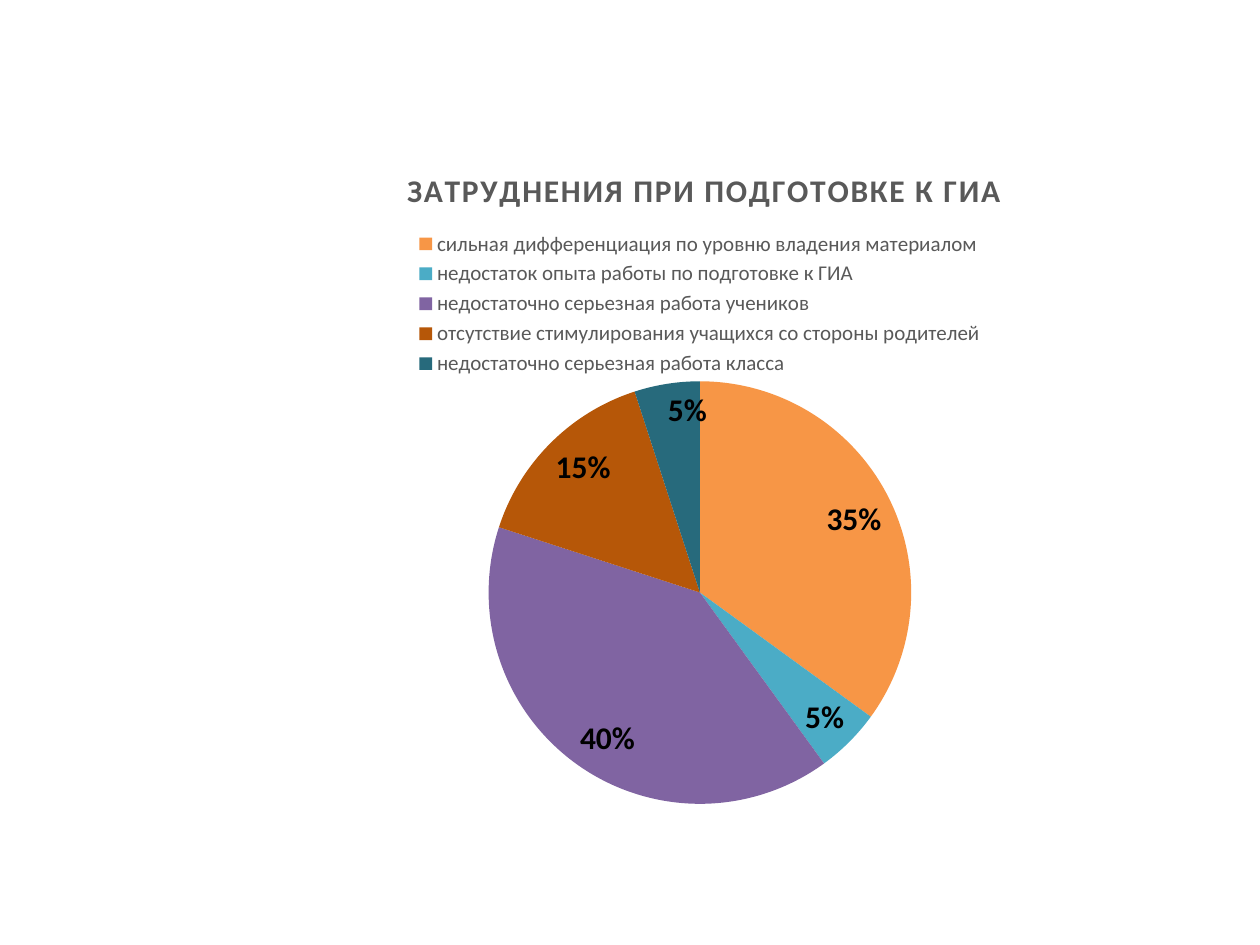
from lxml import etree
from pptx import Presentation
from pptx.chart.data import CategoryChartData
from pptx.dml.color import RGBColor
from pptx.enum.chart import XL_CHART_TYPE, XL_LABEL_POSITION, XL_LEGEND_POSITION
from pptx.oxml.ns import qn
from pptx.util import Pt

PIE = XL_CHART_TYPE.PIE
INSIDE_END = XL_LABEL_POSITION.INSIDE_END
LEGEND_TOP = XL_LEGEND_POSITION.TOP

TITLE = "ЗАТРУДНЕНИЯ ПРИ ПОДГОТОВКЕ К ГИА"
DIFFICULTIES = [
    ("сильная дифференциация по уровню владения материалом", 35, "F79646"),
    ("недостаток опыта работы по подготовке к ГИА", 5, "4BACC6"),
    ("недостаточно серьезная работа учеников", 40, "8064A2"),
    ("отсутствие стимулирования учащихся со стороны родителей", 15, "B65708"),
    ("недостаточно серьезная работа класса", 5, "276A7C"),
]


def color(value):
    return RGBColor.from_string(value)


class SlideBuilder:
    font_name = "Calibri"
    text_color = "595959"
    label_color = "000000"

    def __init__(self, slide):
        self.slide = slide

    def format_font(self, font, size, font_color, bold=False):
        values = {"name": self.font_name, "size": Pt(size), "bold": bold}
        for name, value in values.items():
            setattr(font, name, value)
        font.color.rgb = color(font_color)

    def place(self, element, successors, **fractions):
        for old_layout in element.findall(qn("c:layout")):
            element.remove(old_layout)
        layout = etree.Element(qn("c:layout"))
        manual = etree.SubElement(layout, qn("c:manualLayout"))
        settings = {"xMode": "edge", "yMode": "edge", **fractions}
        for name, value in settings.items():
            etree.SubElement(manual, qn(f"c:{name}")).set("val", str(value))
        following = [child for child in element
                     if child.tag in [qn(f"c:{name}") for name in successors]]
        following[0].addprevious(layout)

    def add_title(self, chart, text):
        chart.has_title = True
        title = chart.chart_title
        title.include_in_layout = False
        paragraph = title.text_frame.paragraphs[0]
        run = paragraph.add_run()
        run.text = text
        self.format_font(run.font, 18, self.text_color, True)
        run.font._element.set("spc", "100")
        self.place(title._element, ["overlay"], x=0.15, y=0.04)

    def add_legend(self, chart):
        chart.has_legend = True
        legend = chart.legend
        legend.position = LEGEND_TOP
        legend.include_in_layout = False
        self.format_font(legend.font, 12, self.text_color)
        self.place(legend._element, ["overlay", "spPr", "txPr"],
                   x=0.16, y=0.13, w=0.68, h=0.22)

    def add_labels(self, plot):
        plot.has_data_labels = True
        labels = plot.data_labels
        values = {"show_percentage": True, "show_value": False,
                  "number_format": "0%", "number_format_is_linked": False,
                  "position": INSIDE_END}
        for name, value in values.items():
            setattr(labels, name, value)
        self.format_font(labels.font, 18, self.label_color, True)

    def add_pie(self, title, rows, left, top, width, height):
        data = CategoryChartData()
        data.categories = [name for name, _, _ in rows]
        data.add_series("Series 1", [share for _, share, _ in rows])
        frame = self.slide.shapes.add_chart(
            PIE, Pt(left), Pt(top), Pt(width), Pt(height), data)
        chart = frame.chart
        self.format_font(chart.font, 10, self.label_color)
        self.add_title(chart, title)
        self.add_legend(chart)
        plot = chart.plots[0]
        plot.vary_by_categories = True
        self.add_labels(plot)
        for index, (_, _, fill_color) in enumerate(rows):
            fill = plot.series[0].points[index].format.fill
            fill.solid()
            fill.fore_color.rgb = color(fill_color)
        plot_area = chart._chartSpace.chart.plotArea
        self.place(plot_area, ["pieChart"], layoutTarget="inner",
                   x=0.25, y=0.35, w=0.5, h=0.6)
        manual = plot_area.find(qn("c:layout")).find(qn("c:manualLayout"))
        manual.insert(0, manual.find(qn("c:layoutTarget")))


def main():
    presentation = Presentation()
    presentation.slide_width = Pt(720)
    presentation.slide_height = Pt(540)
    slide = presentation.slides.add_slide(presentation.slide_layouts[6])
    builder = SlideBuilder(slide)
    builder.add_pie(TITLE, DIFFICULTIES, 156.24, 77.04, 487.44, 402.48)
    presentation.save("out.pptx")


if __name__ == "__main__":
    main()
